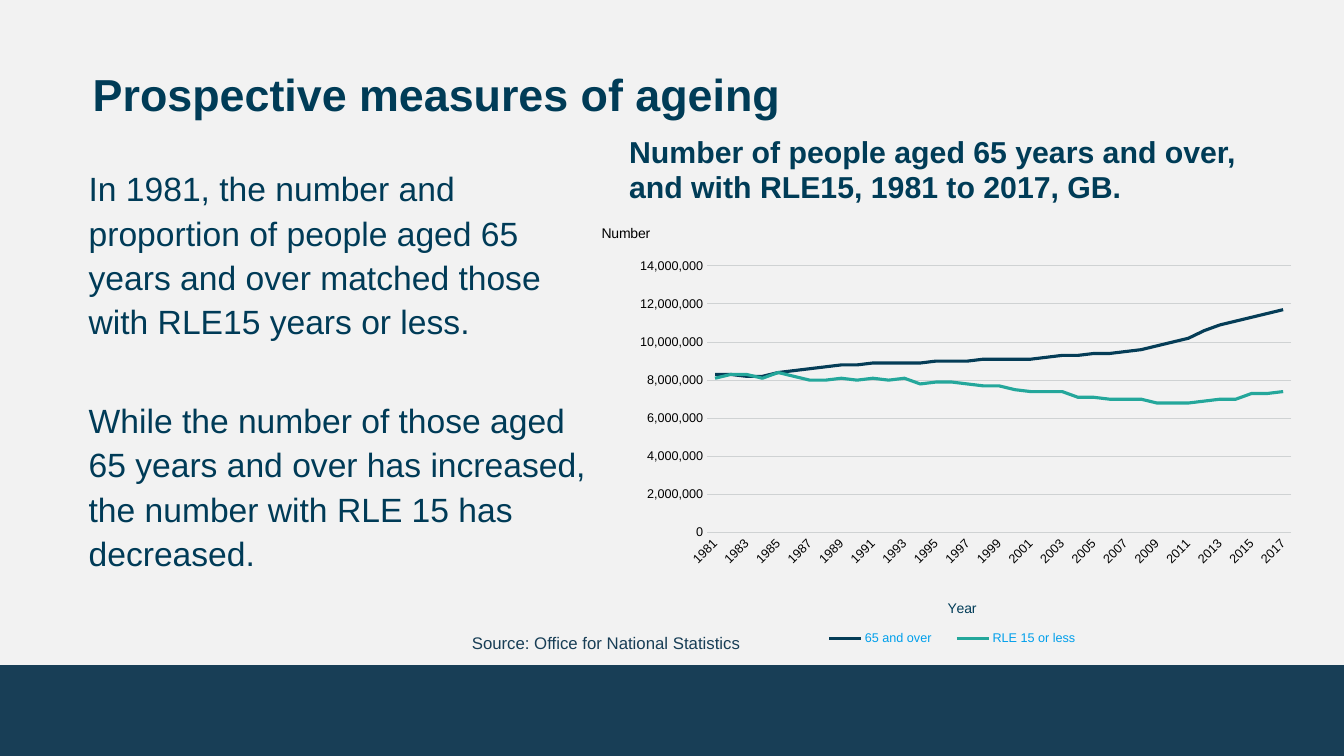
import dataclasses
import pptx
import pptx.chart.data
import pptx.dml.color
import pptx.enum.chart
import pptx.enum.shapes
import pptx.enum.text
import pptx.oxml
import pptx.oxml.ns
import pptx.util

SCALE = 9144

OVER = [83, 83, 82, 82, 84, 85, 86, 87, 88, 88, 89, 89, 89, 89, 90, 90, 90, 91, 91,
        91, 91, 92, 93, 93, 94, 94, 95, 96, 98, 100, 102, 106, 109, 111, 113, 115, 117]
LESS = [81, 83, 83, 81, 84, 82, 80, 80, 81, 80, 81, 80, 81, 78, 79, 79, 78, 77, 77,
        75, 74, 74, 74, 71, 71, 70, 70, 70, 68, 68, 68, 69, 70, 70, 73, 73, 74]


@dataclasses.dataclass(frozen=True)
class Theme:
    face: str = "Arial"
    back: str = "F2F2F2"
    band: str = "183E56"
    ink: str = "003C57"
    text: str = "003B57"
    black: str = "000000"
    grid: str = "CFD2D3"
    key: str = "009FEB"
    over: str = "053D57"
    less: str = "24A79B"
    head: float = 32
    lead: float = 21.6
    body: float = 24
    note: float = 12
    axis: float = 10
    tick: float = 9


THEME = Theme()


def px(num):
    return pptx.util.Emu(num * SCALE)


def tint(code):
    return pptx.dml.color.RGBColor.from_string(code)


def style(font, size, color, bold=False):
    font.name = THEME.face
    font.size = pptx.util.Pt(size)
    font.bold = bold
    font.color.rgb = tint(color)


def add_band(slide, *box):
    band = slide.shapes.add_shape(
        pptx.enum.shapes.MSO_SHAPE.RECTANGLE, *map(px, box))
    band.shadow.inherit = False
    band.fill.solid()
    band.fill.fore_color.rgb = tint(THEME.band)
    band.line.fill.background()


def add_text(slide, box, lines, size, color, bold=False, pad=(0, 0, 0, 0),
             pitch=None, after=0, gap=0, low=False):
    frame = slide.shapes.add_textbox(*map(px, box)).text_frame
    frame.word_wrap = True
    (frame.margin_left, frame.margin_top,
     frame.margin_right, frame.margin_bottom) = map(px, pad)
    anchor = pptx.enum.text.MSO_ANCHOR
    frame.vertical_anchor = anchor.BOTTOM if low else anchor.TOP
    for index, line in enumerate(lines):
        para = frame.add_paragraph() if index else frame.paragraphs[0]
        para.line_spacing = pitch
        para.space_after = pptx.util.Pt(after)
        if index:
            para.space_before = pptx.util.Pt(gap)
        run = para.add_run()
        run.text = line
        style(run.font, size, color, bold)


def make_node(tag, value):
    return pptx.oxml.parse_xml(
        f'<c:{tag} {pptx.oxml.ns.nsdecls("c")} val="{value}"/>')


def place(node, index, inner=False, **spots):
    old = node.find(pptx.oxml.ns.qn("c:layout"))
    if old is not None:
        node.remove(old)
    layout = pptx.oxml.parse_xml(
        f'<c:layout {pptx.oxml.ns.nsdecls("c")}><c:manualLayout/></c:layout>')
    if inner:
        layout[0].append(make_node("layoutTarget", "inner"))
    for mode in ("xMode", "yMode"):
        layout[0].append(make_node(mode, "edge"))
    for tag, value in spots.items():
        layout[0].append(make_node(tag, value))
    node.insert(index, layout)


def turn(node, angle):
    body = next(node.iter(pptx.oxml.ns.qn("a:bodyPr")))
    body.set("rot", str(angle * 60000))
    body.set("vert", "horz")


def set_axis(axis, title, color, left, top):
    axis.major_tick_mark = pptx.enum.chart.XL_TICK_MARK.NONE
    axis.minor_tick_mark = pptx.enum.chart.XL_TICK_MARK.NONE
    style(axis.tick_labels.font, THEME.tick, THEME.black)
    label = axis.axis_title
    run = label.text_frame.paragraphs[0].add_run()
    run.text = title
    style(run.font, THEME.axis, color)
    node = label._element
    turn(node, 0)
    place(node, 1, x=left, y=top)


def set_line(line, color, width):
    line.color.rgb = tint(color)
    line.width = pptx.util.Pt(width)


def add_graph(slide, *box):
    data = pptx.chart.data.CategoryChartData(number_format="#,##0")
    data.categories = [str(year) for year in range(1981, 2018)]
    for name, nums in (("65 and over", OVER), ("RLE 15 or less", LESS)):
        data.add_series(name, [num * 100000 for num in nums])
    chart = slide.shapes.add_chart(
        pptx.enum.chart.XL_CHART_TYPE.LINE, *map(px, box), data).chart
    chart.has_title = False
    style(chart.font, THEME.axis, THEME.text)
    chart.plots[0].vary_by_categories = False
    for series, color in zip(chart.plots[0].series, (THEME.over, THEME.less)):
        series.smooth = False
        set_line(series.format.line, color, 2.25)

    years = chart.category_axis
    set_axis(years, "Year", THEME.text, 0.49, 0.79)
    set_line(years.format.line, THEME.grid, 0.75)
    years.has_major_gridlines = False
    node = years._element
    turn(node.find(pptx.oxml.ns.qn("c:txPr")), -45)
    node.find(pptx.oxml.ns.qn("c:noMultiLvlLbl")).addprevious(
        make_node("tickLblSkip", 2))

    count = chart.value_axis
    set_axis(count, "Number", THEME.black, 0.01, 0.03)
    count.minimum_scale, count.maximum_scale = 0, 14000000
    count.major_unit = 2000000
    count.tick_labels.number_format = "#,##0"
    count.tick_labels.number_format_is_linked = False
    count.format.line.fill.background()
    set_line(count.major_gridlines.format.line, THEME.grid, 0.75)

    chart.has_legend = True
    chart.legend.position = pptx.enum.chart.XL_LEGEND_POSITION.BOTTOM
    chart.legend.include_in_layout = False
    style(chart.legend.font, THEME.tick, THEME.key)
    place(chart.legend._element, 1, x=0.3, y=0.85, w=0.4, h=0.05)
    plot = next(chart._chartSpace.iter(pptx.oxml.ns.qn("c:plotArea")))
    place(plot, 0, True, x=0.16, y=0.12, w=0.81, h=0.54)


def main():
    deck = pptx.Presentation()
    deck.slide_width, deck.slide_height = px(1333), px(750)
    slide = deck.slides.add_slide(deck.slide_layouts[6])
    slide.background.fill.solid()
    slide.background.fill.fore_color.rgb = tint(THEME.back)
    add_band(slide, 0, 660, 1333, 90)
    add_text(slide, (624, 135, 640, 46),
             ["Number of people aged 65 years and over, and with RLE15, 1981 to 2017, GB."],
             THEME.lead, THEME.ink, bold=True, pitch=0.95, after=7.5)
    add_graph(slide, 587, 205, 715, 490)
    add_text(slide, (88, 158, 513, 252),
             ["In 1981, the number and proportion of people aged 65 years and over "
              "matched those with RLE15 years or less.",
              "While the number of those aged 65 years and over has increased, "
              "the number with RLE 15 has decreased."],
             THEME.body, THEME.text, pad=(0, 5, 0, 5), pitch=1.1, after=3.8, gap=35)
    add_text(slide, (92, 70, 1150, 51), ["Prospective measures of ageing"],
             THEME.head, THEME.ink, bold=True, pitch=0.95, after=7.5)
    add_text(slide, (468, 623, 476, 30), ["Source: Office for National Statistics"],
             THEME.note, THEME.band, pad=(0, 5, 10, 5), low=True)
    deck.save("out.pptx")


if __name__ == "__main__":
    main()
